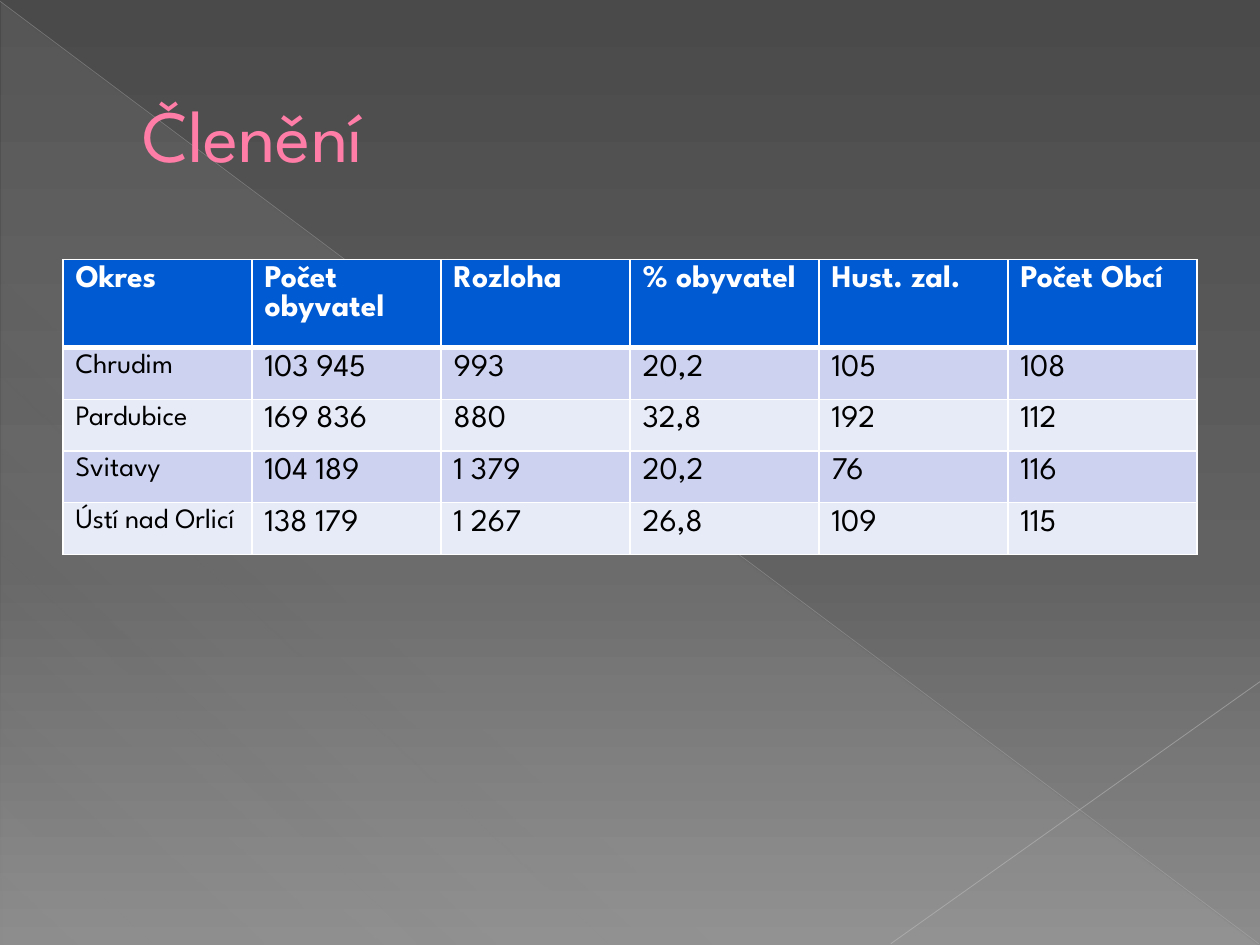
import typing

import lxml.etree
import pptx
import pptx.dml.color
import pptx.enum.shapes
import pptx.enum.text
import pptx.oxml.ns
import pptx.util

Inches = pptx.util.Inches
Pt = pptx.util.Pt
qn = pptx.oxml.ns.qn
FONT = "League Spartan"
WHITE = "FFFFFF"


class Stop(typing.NamedTuple):
    pos: int
    color: str
    alpha: int = 100


class Ray(typing.NamedTuple):
    start: tuple[float, float]
    end: tuple[float, float]
    color: str
    width: float
    alpha: int


RAYS = [
    Ray((0, 0.01), (9.99, 7.49), "BFBFBF", 0.39, 35),
    Ray((10, 5.41), (7.07, 7.49), "C6C6C6", 0.47, 45),
]
ROWS = [
    ["Okres", "Počet obyvatel", "Rozloha", "% obyvatel", "Hust. zal.", "Počet Obcí"],
    ["Chrudim", "103 945", "993", "20,2", "105", "108"],
    ["Pardubice", "169 836", "880", "32,8", "192", "112"],
    ["Svitavy", "104 189", "1 379", "20,2", "76", "116"],
    ["Ústí nad Orlicí", "138 179", "1 267", "26,8", "109", "115"],
]


def rgb(code: str) -> pptx.dml.color.RGBColor:
    return pptx.dml.color.RGBColor.from_string(code)


def add(parent, tag: str, **attrs):
    return lxml.etree.SubElement(parent, qn(tag), {k: str(v) for k, v in attrs.items()})


def tint(parent, color: str, alpha: int = 100) -> None:
    """Add a colour element, with its opacity in percent."""
    node = add(parent, "a:srgbClr", val=color)
    if alpha < 100:
        add(node, "a:alpha", val=alpha * 1000)


def blend(fill, owner, stops: list[Stop], angle: int) -> None:
    """Give a fill, found inside the owner element, a linear gradient."""
    fill.gradient()
    grad = next(owner.iter(qn("a:gradFill")))
    for child in list(grad):
        grad.remove(child)
    group = add(grad, "a:gsLst")
    for stop in stops:
        tint(add(group, "a:gs", pos=stop.pos * 1000), stop.color, stop.alpha)
    add(grad, "a:lin", ang=angle * 60000, scaled=0)


def style(text, size: float, color: str, bold: bool = False) -> None:
    for run in text.paragraphs[0].runs:
        run.font.name = FONT
        run.font.size = Pt(size)
        run.font.bold = bold
        run.font.color.rgb = rgb(color)


def draw_ray(slide, ray: Ray) -> None:
    line = slide.shapes.add_connector(
        pptx.enum.shapes.MSO_CONNECTOR.STRAIGHT,
        *(Inches(v) for v in ray.start + ray.end),
    )
    line.line.width = Pt(ray.width)
    line.line.color.rgb = rgb(ray.color)
    color = next(line.element.iter(qn("a:srgbClr")))
    add(color, "a:alpha", val=ray.alpha * 1000)
    add(line.element.spPr, "a:effectLst")


def draw_back(slide) -> None:
    blend(slide.background.fill, slide.element,
          [Stop(0, "4A4A4A"), Stop(60, "626262"), Stop(100, "8C8C8C")], 90)
    wedge = slide.shapes.add_shape(
        pptx.enum.shapes.MSO_SHAPE.RIGHT_TRIANGLE,
        Inches(0.01), Inches(0.02), Inches(9.98), Inches(7.48),
    )
    wedge.shadow.inherit = False
    wedge.line.fill.background()
    blend(wedge.fill, wedge.element,
          [Stop(0, "D2D2D2", 10), Stop(70, "D2D2D2", 8), Stop(100, "D2D2D2", 1)], 133)
    for ray in RAYS:
        draw_ray(slide, ray)


def draw_title(slide) -> None:
    box = slide.shapes.add_textbox(Inches(0.5), Inches(0.29), Inches(9), Inches(1.53))
    text = box.text_frame
    text.word_wrap = True
    text.vertical_anchor = pptx.enum.text.MSO_ANCHOR.MIDDLE
    text.text = "Členění"
    style(text, 42, "FF7DA7")
    props = text.paragraphs[0]._p.get_or_add_pPr()
    props.set("marL", str(Inches(0.53)))


def edge(cell, top: float, bottom: float) -> None:
    """Draw white cell borders; widths are in points."""
    props = cell._tc.get_or_add_tcPr()
    for side, width in zip("LRTB", (1, 1, top, bottom)):
        line = add(props, f"a:ln{side}", w=Pt(width))
        tint(add(line, "a:solidFill"), WHITE)


def draw_table(slide) -> None:
    table = slide.shapes.add_table(
        len(ROWS), len(ROWS[0]), Inches(0.5), Inches(2.06), Inches(9), Inches(2.19)
    ).table
    for r, words in enumerate(ROWS):
        head = r == 0
        table.rows[r].height = Inches(0.55 if head else 0.41)
        shade = "005BD3" if head else ("CCD2EF" if r % 2 else "E7EAF7")
        for c, word in enumerate(words):
            cell = table.cell(r, c)
            cell.text_frame.text = word
            size = 16 if c == 0 and not head else 18
            style(cell.text_frame, size, WHITE if head else "000000", head)
            edge(cell, 3 if r == 1 else 1, 3 if head else 1)
            cell.fill.solid()
            cell.fill.fore_color.rgb = rgb(shade)


def main() -> None:
    deck = pptx.Presentation()
    deck.slide_width, deck.slide_height = Inches(10), Inches(7.5)
    slide = deck.slides.add_slide(deck.slide_layouts[6])
    draw_back(slide)
    draw_title(slide)
    draw_table(slide)
    deck.save("out.pptx")


if __name__ == "__main__":
    main()
